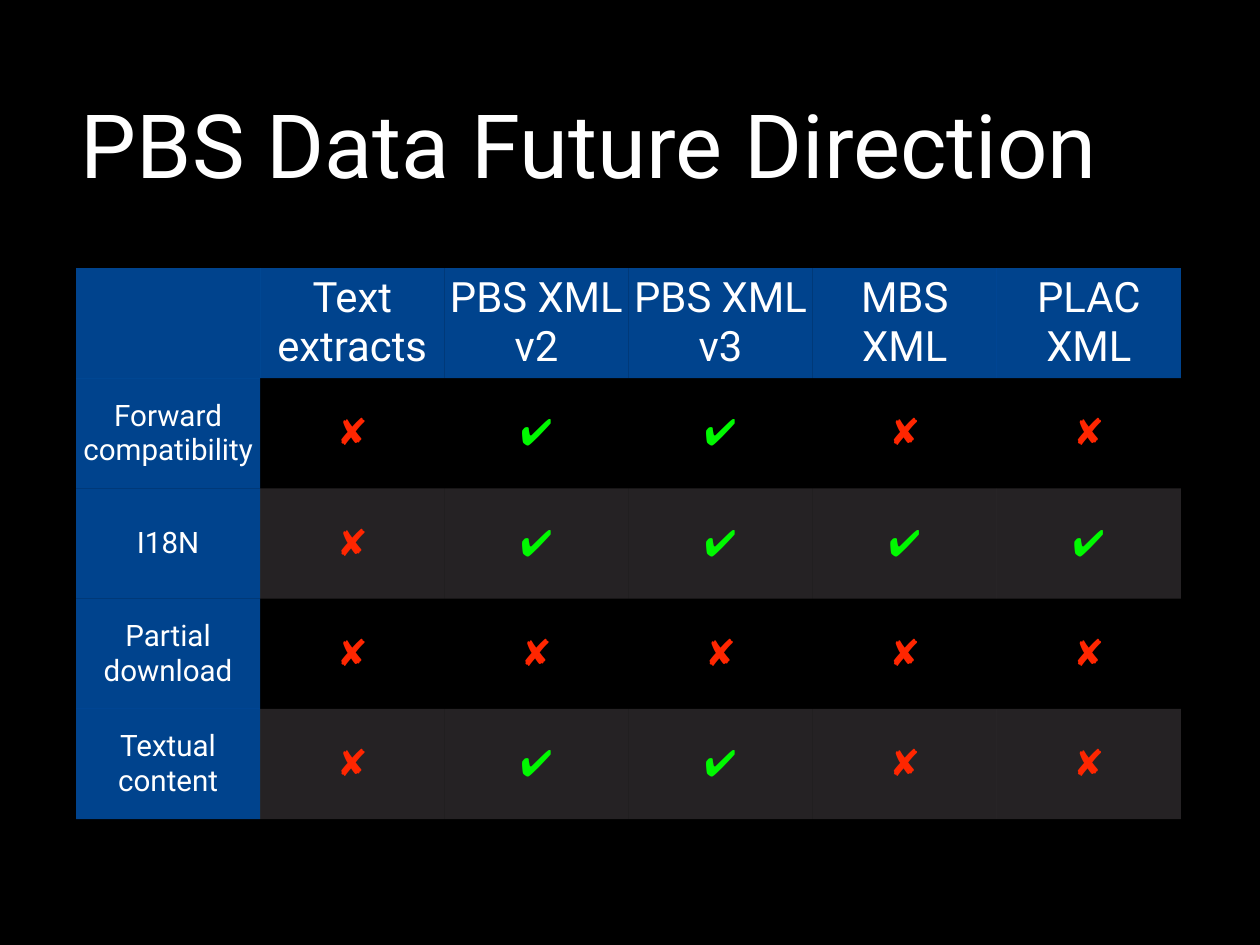
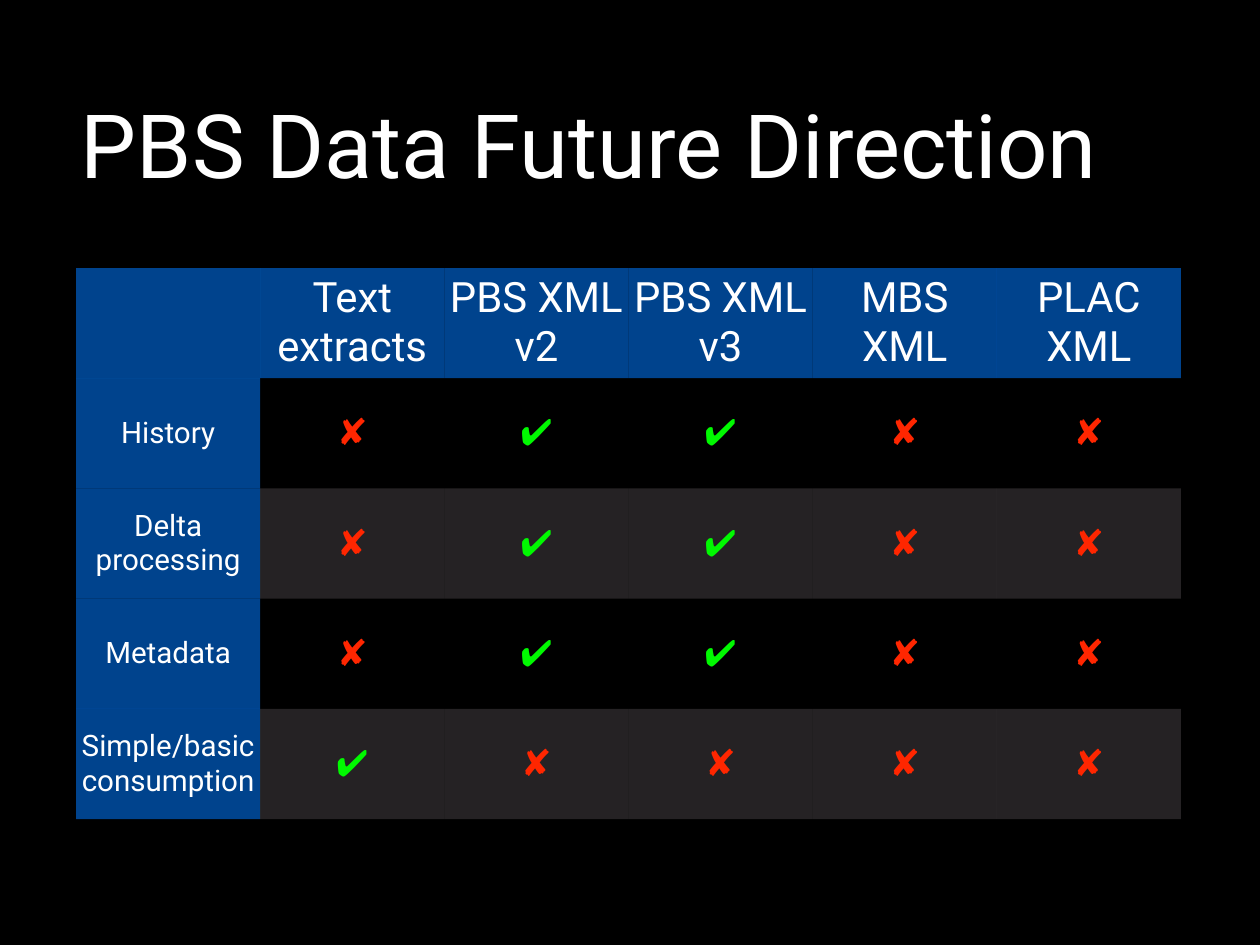
from collections import namedtuple
from dataclasses import dataclass

from lxml.etree import SubElement
from pptx import Presentation
from pptx.dml.color import RGBColor as RGB
from pptx.enum.text import MSO_ANCHOR as Anchor, MSO_AUTO_SIZE as AutoSize, PP_ALIGN as Align
from pptx.oxml.ns import qn
from pptx.util import Pt

EMU_PER_PX = 10320
NO_GRID_STYLE = "{2D5ABB26-0587-4C30-8999-92F81FD0307C}"

Box = namedtuple("Box", "left top width height")
Tint = namedtuple("Tint", "color opacity")
Mark = namedtuple("Mark", "symbol color")


@dataclass(frozen=True)
class Theme:
    font: str = "Roboto"
    background: RGB = RGB(0, 0, 0)
    text: RGB = RGB(255, 255, 255)
    heading: Tint = Tint(RGB(0x00, 0x71, 0xEB), 60)
    band: Tint = Tint(RGB(0x67, 0x61, 0x64), 36)
    yes: RGB = RGB(0x00, 0xF9, 0x00)
    no: RGB = RGB(0xFF, 0x26, 0x00)
    title_size: int = 72
    format_size: int = 34
    feature_size: int = 24
    mark_size: int = 30
    inset: int = 5


THEME = Theme()
SLIDE = Box(0, 0, 1260, 945)
TITLE_BOX = Box(76, 25, 1108, 236)
TABLE_BOX = Box(76, 268, 1105, 551)
MARKS = {"Y": Mark("✔︎", THEME.yes), "N": Mark("✘", THEME.no)}

TITLE = "PBS Data Future Direction"
FORMATS = ["Text extracts", "PBS XML v2", "PBS XML v3", "MBS XML", "PLAC XML"]
COMPARISONS = [
    {
        "Forward compatibility": "NYYNN",
        "I18N": "NYYYY",
        "Partial download": "NNNNN",
        "Textual content": "NYYNN",
    },
    {
        "History": "NYYNN",
        "Delta processing": "NYYNN",
        "Metadata": "NYYNN",
        "Simple/basic consumption": "YNNNN",
    },
]


def px(length):
    return int(length * EMU_PER_PX)


def set_text(holder, frame, text, size, color, align):
    """Write one styled paragraph; holder is the cell or frame that owns the margins."""
    holder.margin_left = holder.margin_right = px(THEME.inset)
    holder.margin_top = holder.margin_bottom = px(THEME.inset)
    holder.vertical_anchor = Anchor.MIDDLE
    frame.text = text
    paragraph = frame.paragraphs[0]
    paragraph.alignment = align
    font = paragraph.font
    font.name, font.size, font.bold = THEME.font, Pt(size), False
    font.color.rgb = color


def tint_cell(cell, tint):
    if tint is None:
        cell.fill.background()
        return
    cell.fill.solid()
    cell.fill.fore_color.rgb = tint.color
    color = next(cell.fill._xPr.iter(qn("a:srgbClr")))
    SubElement(color, qn("a:alpha"), val=str(tint.opacity * 1000))


def fill_cell(cell, text, size, color, tint):
    tint_cell(cell, tint)
    set_text(cell, cell.text_frame, text, size, color, Align.CENTER)


def place_title(slide, box):
    title = slide.shapes.title
    title.left, title.top, title.width, title.height = map(px, box)
    frame = title.text_frame
    frame.word_wrap, frame.auto_size = True, AutoSize.NONE
    set_text(frame, frame, TITLE, THEME.title_size, THEME.text, Align.LEFT)


def place_comparison(slide, box, features):
    frame = slide.shapes.add_table(len(features) + 1, len(FORMATS) + 1, *map(px, box))
    table = frame.table
    table.first_row = table.horz_banding = False
    next(frame._element.iter(qn("a:tableStyleId"))).text = NO_GRID_STYLE

    for col, heading in enumerate(["", *FORMATS]):
        fill_cell(table.cell(0, col), heading, THEME.format_size, THEME.text, THEME.heading)
    for row, (feature, answers) in enumerate(features.items(), 1):
        fill_cell(table.cell(row, 0), feature, THEME.feature_size, THEME.text, THEME.heading)
        band = THEME.band if row % 2 == 0 else None
        for col, answer in enumerate(answers, 1):
            mark = MARKS[answer]
            fill_cell(table.cell(row, col), mark.symbol, THEME.mark_size, mark.color, band)


def add_comparison_slide(deck, features):
    slide = deck.slides.add_slide(deck.slide_layouts.get_by_name("Title Only"))
    place_title(slide, TITLE_BOX)
    place_comparison(slide, TABLE_BOX, features)


def main():
    deck = Presentation()
    deck.slide_width, deck.slide_height = px(SLIDE.width), px(SLIDE.height)
    backdrop = deck.slide_master.background.fill
    backdrop.solid()
    backdrop.fore_color.rgb = THEME.background
    for features in COMPARISONS:
        add_comparison_slide(deck, features)
    deck.save("out.pptx")


if __name__ == "__main__":
    main()
